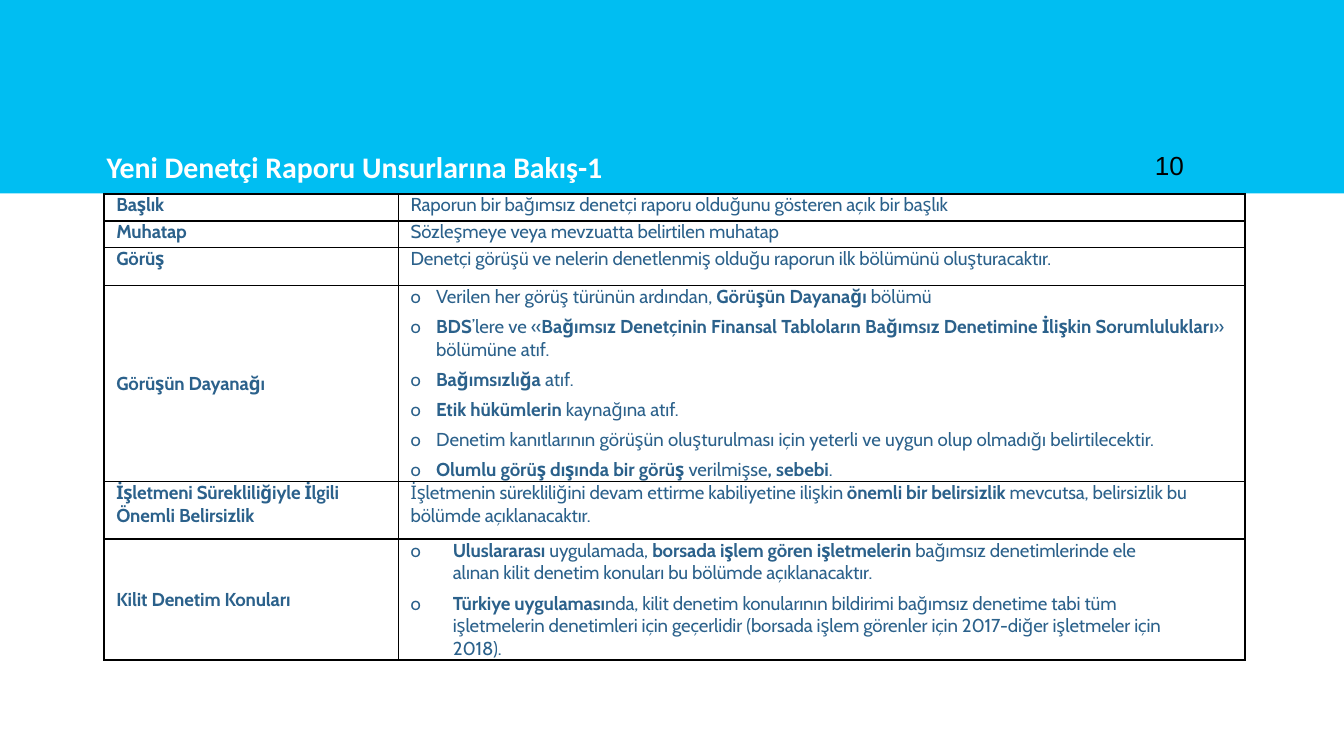
from lxml import etree
from pptx import Presentation
from pptx import util as u
from pptx.dml.color import RGBColor
from pptx.enum import shapes, text
from pptx.oxml.ns import qn

SKY = RGBColor(0x00, 0xBE, 0xF2)
STEEL = RGBColor(0x2B, 0x61, 0x8B)
WHITE = RGBColor(0xFF, 0xFF, 0xFF)
BLACK = RGBColor(0x00, 0x00, 0x00)

deck = Presentation()
deck.slide_width = u.Inches(10)
deck.slide_height = deck.slide_width * 9 // 16
slide = deck.slides.add_slide(deck.slide_layouts[6])
UNIT = deck.slide_width / 100  # square grid, 100 columns wide


def grid(*counts):
    return [u.Emu(round(n * UNIT)) for n in counts]


def write(para, words, size, font, color, space=0):
    """Add runs to a paragraph; parts between asterisks are bold."""
    for i, part in enumerate(words.split("*")):
        if part:
            run = para.add_run()
            run.text = part
            run.font.size, run.font.name = u.Pt(size), font
            run.font.bold = i % 2 == 1
            run.font.color.rgb = color
            if space:
                run.font._element.set("spc", str(space))


# Header band with title and page number
band = slide.shapes.add_shape(shapes.MSO_SHAPE.RECTANGLE, *grid(0, 0, 100, 14.4))
band.shadow.inherit = False
band.fill.solid()
band.fill.fore_color.rgb = SKY
band.line.fill.background()

for place, words, size, font, color in [
    ((6.95, 7.45, 78, 7.3), "*Yeni Denetçi Raporu Unsurlarına Bakış-1*", 16, "Calibri", WHITE),
    ((84.95, 7.15, 6, 7.3), "10", 14, "Arial", BLACK),
]:
    frame = slide.shapes.add_textbox(*grid(*place)).text_frame
    frame.word_wrap = True
    frame.vertical_anchor = text.MSO_ANCHOR.BOTTOM
    frame.margin_left, frame.margin_top, frame.margin_right, frame.margin_bottom = grid(1, 1, 1, 1)
    write(frame.paragraphs[0], words, size, font, color)

# Each row: height, label, bullet indent (0 for plain text), letter spacing, paragraphs
ROWS = [
    (2, "Başlık", 0, -5, [
        "Raporun bir bağımsız denetçi raporu olduğunu gösteren açık bir başlık"]),
    (2, "Muhatap", 0, -5, ["Sözleşmeye veya mevzuatta belirtilen muhatap"]),
    (2.8, "Görüş", 0, -5, [
        "Denetçi görüşü ve nelerin denetlenmiş olduğu raporun ilk bölümünü oluşturacaktır."]),
    (14.6, "Görüşün Dayanağı", 1.9, 0, [
        "Verilen her görüş türünün ardından, *Görüşün Dayanağı *bölümü",
        "*BDS*’lere ve «*Bağımsız Denetçinin Finansal Tabloların Bağımsız Denetimine "
        "İlişkin Sorumlulukları*» bölümüne atıf.",
        "*Bağımsızlığa* atıf.",
        "*Etik hükümlerin *kaynağına atıf.",
        "Denetim kanıtlarının görüşün oluşturulması için yeterli ve uygun olup olmadığı "
        "belirtilecektir.",
        "*Olumlu görüş dışında bir görüş *verilmişse*, sebebi*."]),
    (4.3, "İşletmeni Sürekliliğiyle İlgili Önemli Belirsizlik", 0, -5, [
        "İşletmenin sürekliliğini devam ettirme kabiliyetine ilişkin *önemli bir belirsizlik "
        "*mevcutsa, belirsizlik bu bölümde açıklanacaktır."]),
    (9, "Kilit Denetim Konuları", 3.15, -5, [
        "*Uluslararası* uygulamada, *borsada işlem gören işletmelerin *bağımsız "
        "denetimlerinde ele alınan kilit denetim konuları bu bölümde açıklanacaktır.",
        "*Türkiye uygulaması*nda, kilit denetim konularının bildirimi bağımsız denetime tabi "
        "tüm işletmelerin denetimleri için geçerlidir (borsada işlem görenler için "
        "2017-diğer işletmeler için 2018)."]),
]
COLS = grid(21.9, 63)
PAD = 0.9

high = sum(row[0] for row in ROWS)
table = slide.shapes.add_table(len(ROWS), 2, *grid(7.75, 14.43, 84.9, high)).table
table.first_row = table.horz_banding = False
for col, wide in zip(table.columns, COLS):
    col.width = wide

for r, (tall, label, hang, space, items) in enumerate(ROWS):
    table.rows[r].height = grid(tall)[0]
    for c, paras in enumerate([[f"*{label}*"], items]):
        cell = table.cell(r, c)
        cell.margin_left = cell.margin_top = cell.margin_bottom = 0
        # Labels and the widely indented list stop short of the right edge
        cell.margin_right = grid(1 if c == 0 else 5 if hang > 3 else 0)[0]
        if c == 0 and hang:
            cell.vertical_anchor = text.MSO_ANCHOR.MIDDLE

        props = cell._tc.get_or_add_tcPr()
        for side in ("a:lnL", "a:lnR", "a:lnT", "a:lnB"):
            line = etree.SubElement(props, qn(side), w=str(u.Pt(1)))
            fill = etree.SubElement(line, qn("a:solidFill"))
            etree.SubElement(fill, qn("a:srgbClr"), val=str(BLACK))
        cell.fill.background()

        step = hang if c else 0
        for i, words in enumerate(paras):
            para = cell.text_frame.paragraphs[0] if i == 0 else cell.text_frame.add_paragraph()
            form = para._p.get_or_add_pPr()
            left, back = grid(PAD + step, -step)
            form.set("marL", str(left))
            form.set("indent", str(back))
            if step:
                etree.SubElement(form, qn("a:buFont"), typeface="Cabin")
                etree.SubElement(form, qn("a:buChar"), char="o")
                para.space_after = u.Pt(2)
                if i:
                    para.space_before = u.Pt(2)
            write(para, words, 10, "Cabin", STEEL, space if c else -5)

deck.save("out.pptx")
